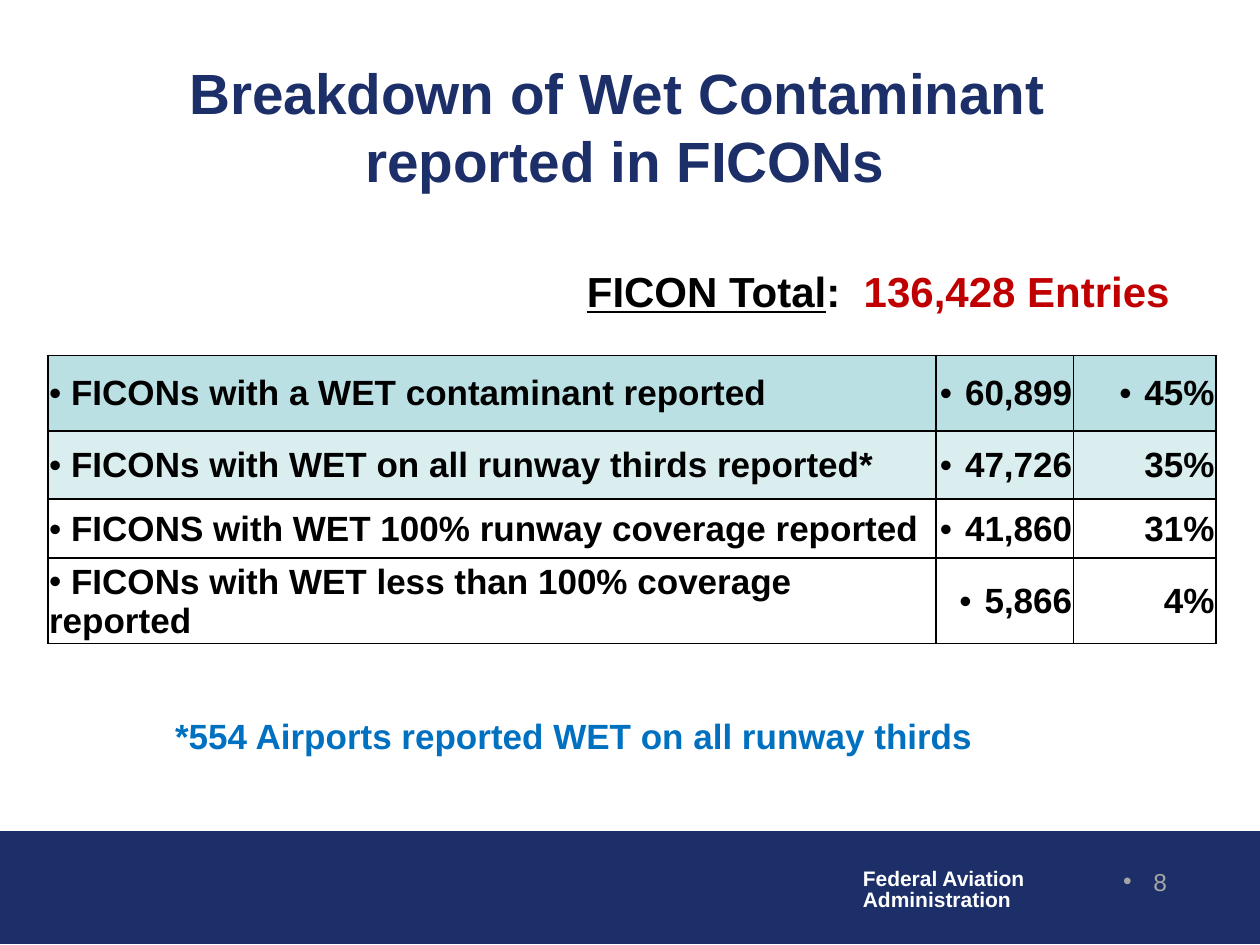
from lxml import etree
from pptx import Presentation
from pptx.dml.color import RGBColor
from pptx.enum import shapes, text
from pptx.oxml import ns
from pptx.util import Inches, Pt

COLORS = {
    "navy": "1D2F68", "white": "FFFFFF", "black": "000000", "gray": "A6A6A6",
    "red": "C00000", "blue": "0070C0", "teal": "BBE0E3", "pale": "DAEDEF",
}


def add_run(paragraph, wording, size, color, bold=True, underline=False):
    run = paragraph.add_run()
    run.text = wording
    run.font.name = "Arial"
    run.font.size = Pt(size)
    run.font.bold = bold
    run.font.underline = underline
    run.font.color.rgb = RGBColor.from_string(COLORS[color])


def add_bullet(paragraph, hang):
    props = paragraph._p.get_or_add_pPr()
    props.set("marL", str(Inches(hang)))
    props.set("indent", str(-Inches(hang)))
    etree.SubElement(props, ns.qn("a:buFont"), typeface="Arial")
    etree.SubElement(props, ns.qn("a:buChar"), char="•")


prs = Presentation()
prs.slide_width, prs.slide_height = Inches(10), Inches(7.5)
slide = prs.slides.add_slide(prs.slide_layouts[6])

band = slide.shapes.add_shape(
    shapes.MSO_SHAPE.RECTANGLE, Inches(0), Inches(6.6), Inches(10), Inches(0.89))
band.shadow.inherit = False
band.fill.solid()
band.fill.fore_color.rgb = RGBColor.from_string(COLORS["navy"])
band.line.color.rgb = RGBColor.from_string(COLORS["navy"])
band.line.width = Pt(0.75)

agency = slide.shapes.add_textbox(Inches(6.75), Inches(6.85), Inches(1.5), Inches(0.44)).text_frame
agency.word_wrap = False
agency.auto_size = text.MSO_AUTO_SIZE.SHAPE_TO_FIT_TEXT
for paragraph, wording in zip(
        (agency.paragraphs[0], agency.add_paragraph()), ("Federal Aviation", "Administration")):
    paragraph.line_spacing = 0.85
    add_run(paragraph, wording, 12, "white")

title = slide.shapes.add_textbox(Inches(0.48), Inches(0.73), Inches(8.96), Inches(0.86)).text_frame
title.word_wrap = True
title.vertical_anchor = text.MSO_ANCHOR.BOTTOM
heading = title.paragraphs[0]
heading.alignment = text.PP_ALIGN.CENTER
add_run(heading, "Breakdown of Wet Contaminant ", 32.4, "navy")
heading.add_line_break()
add_run(heading, "reported in FICONs", 32.4, "navy")

page = slide.shapes.add_textbox(Inches(8.18), Inches(6.83), Inches(1.18), Inches(0.5)).text_frame
page.word_wrap = True
page_number = page.paragraphs[0]
page_number.alignment = text.PP_ALIGN.RIGHT
add_bullet(page_number, 0.24)
add_run(page_number, "8", 14, "gray", bold=False)

findings = [
    (0.6, "teal", " FICONs with a WET contaminant reported", "60,899", "45%"),
    (0.54, "pale", " FICONs with WET on all runway thirds reported*", "47,726", "35%"),
    (0.47, "white", " FICONS with WET 100% runway coverage reported", "41,860", "31%"),
    (0.59, "white", " FICONs with WET less than 100% coverage reported", "5,866", "4%"),
]
breakdown = slide.shapes.add_table(
    len(findings), 3, Inches(0.38), Inches(2.82), Inches(9.26), Inches(2.2)).table
for column, width in zip(breakdown.columns, (7.05, 1.09, 1.13)):
    column.width = Inches(width)
for r, (height, shade, *entries) in enumerate(findings):
    breakdown.rows[r].height = Inches(height)
    for c, entry in enumerate(entries):
        cell = breakdown.cell(r, c)
        cell.vertical_anchor = text.MSO_ANCHOR.MIDDLE
        cell.margin_left = cell.margin_right = cell.margin_top = Inches(0.01)
        cell.margin_bottom = 0
        cell.fill.solid()
        cell.fill.fore_color.rgb = RGBColor.from_string(COLORS[shade])
        for i, side in enumerate(("lnL", "lnR", "lnT", "lnB")):
            border = etree.Element(ns.qn("a:" + side), w=str(Pt(1)))
            ink = etree.SubElement(border, ns.qn("a:solidFill"))
            etree.SubElement(ink, ns.qn("a:srgbClr"), val=COLORS["black"])
            cell._tc.get_or_add_tcPr().insert(i, border)
        paragraph = cell.text_frame.paragraphs[0]
        paragraph.alignment = text.PP_ALIGN.RIGHT if c else text.PP_ALIGN.LEFT
        if c < 2 or r == 0:
            add_bullet(paragraph, 0.2 if c else 0)
        add_run(paragraph, entry, 20, "black")

total = slide.shapes.add_textbox(Inches(4.56), Inches(2.06), Inches(4.87), Inches(0.5)).text_frame
total.word_wrap = False
total.auto_size = text.MSO_AUTO_SIZE.SHAPE_TO_FIT_TEXT
add_run(total.paragraphs[0], "FICON Total", 24, "black", underline=True)
add_run(total.paragraphs[0], ":", 24, "black")
add_run(total.paragraphs[0], "  136,428 Entries", 24, "red")

footnote = slide.shapes.add_textbox(Inches(1.28), Inches(5.62), Inches(6.55), Inches(0.44)).text_frame
footnote.word_wrap = True
footnote.auto_size = text.MSO_AUTO_SIZE.SHAPE_TO_FIT_TEXT
footnote.paragraphs[0].alignment = text.PP_ALIGN.CENTER
add_run(footnote.paragraphs[0], "*554 Airports reported WET on all runway thirds", 20, "blue")

prs.save("out.pptx")
